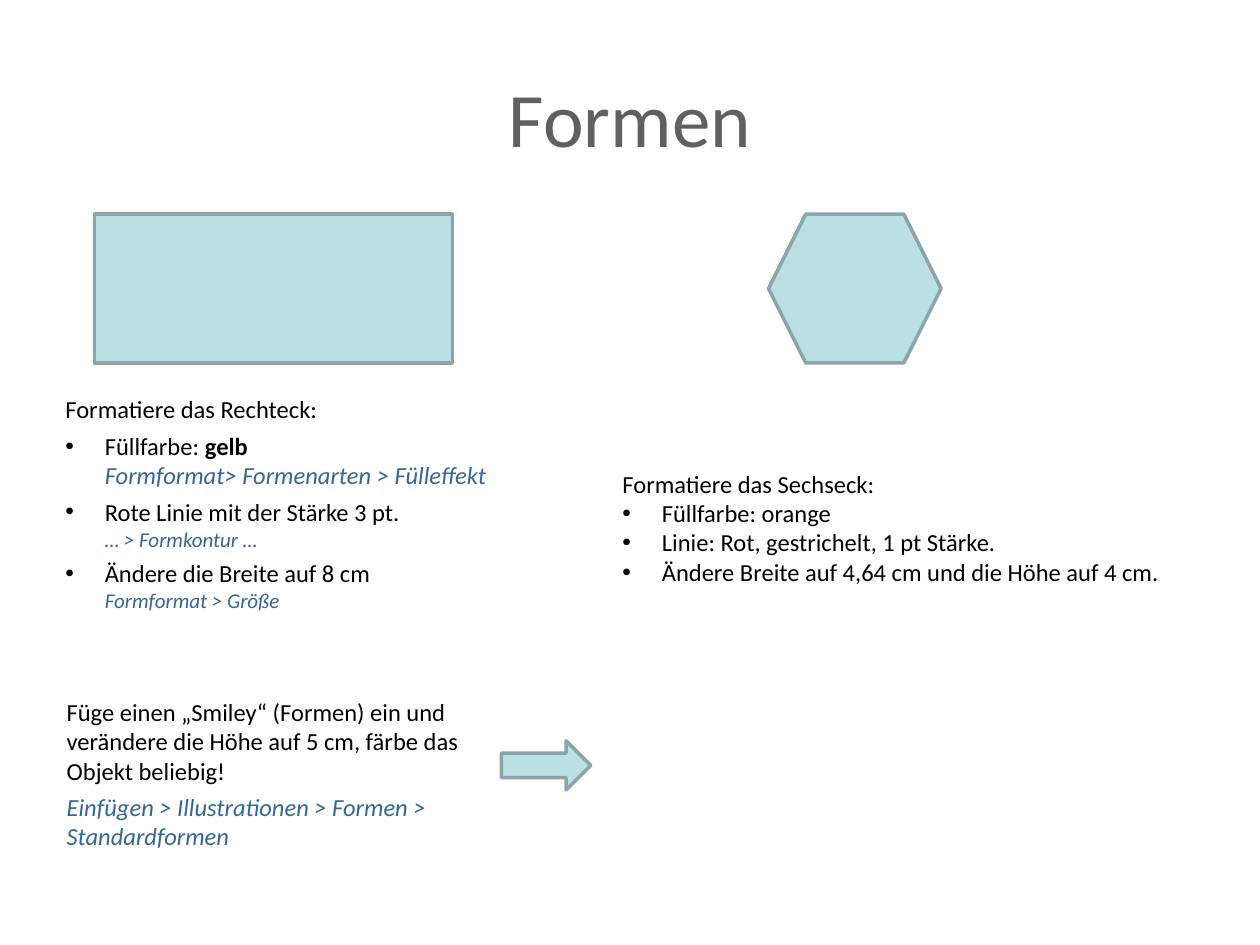
import pptx
import pptx.dml.color
import pptx.enum.shapes
import pptx.enum.text
import pptx.util
from lxml import etree
from pptx.util import Pt

BLACK = pptx.dml.color.RGBColor(0x00, 0x00, 0x00)
GREY = pptx.dml.color.RGBColor(0x60, 0x60, 0x60)
BLUE = pptx.dml.color.RGBColor(0x33, 0x66, 0x99)
FILL = pptx.dml.color.RGBColor(0xBB, 0xE0, 0xE3)
OUTLINE = pptx.dml.color.RGBColor(0x8A, 0xA6, 0xA8)
FONT = "Calibri"
INDENT = Pt(22.5)


def add_run(paragraph, text, size=14, color=BLACK, bold=False, italic=False):
    run = paragraph.add_run()
    run.text = text
    run.font.name = FONT
    run.font.size = Pt(size)
    run.font.color.rgb = color
    run.font.bold = bold
    run.font.italic = italic


def add_paragraph(text_frame, space_before, bullet=False):
    paragraph = text_frame.paragraphs[0]
    if paragraph.runs:
        paragraph = text_frame.add_paragraph()
    paragraph.space_before = Pt(space_before)
    properties = paragraph._p.get_or_add_pPr()
    properties.set("marL", str(INDENT if bullet else 0))
    properties.set("indent", str(-INDENT if bullet else 0))
    tag = pptx.oxml.ns.qn("a:buChar" if bullet else "a:buNone")
    mark = etree.SubElement(properties, tag)
    if bullet:
        mark.set("char", "•")
    return paragraph


presentation = pptx.Presentation()
presentation.slide_width = Pt(720)
presentation.slide_height = Pt(540)
slide = presentation.slides.add_slide(presentation.slide_layouts.get_by_name("Two Content"))
title, rectangle_task, hexagon_task = list(slide.placeholders)[:3]
for placeholder in list(slide.placeholders)[3:]:
    placeholder._element.getparent().remove(placeholder._element)

# Title
title.left, title.top, title.width, title.height = Pt(36), Pt(21.6), Pt(648), Pt(90)
title_paragraph = title.text_frame.paragraphs[0]
title_paragraph.alignment = pptx.enum.text.PP_ALIGN.CENTER
add_run(title_paragraph, "Formen", 44, GREY)

# Shapes to be formatted, and the arrow
shape_types = pptx.enum.shapes.MSO_SHAPE
for shape_type, left, top, width, height in [
    (shape_types.RECTANGLE, 54, 122.4, 204.5, 85),
    (shape_types.HEXAGON, 439.2, 122.4, 98.6, 85),
    (shape_types.RIGHT_ARROW, 286.5, 423.3, 51.1, 28.1),
]:
    shape = slide.shapes.add_shape(shape_type, Pt(left), Pt(top), Pt(width), Pt(height))
    shape.shadow.inherit = False
    shape.fill.solid()
    shape.fill.fore_color.rgb = FILL
    shape.line.color.rgb = OUTLINE
    shape.line.width = Pt(2)

# Text areas
smiley_task = slide.shapes.add_textbox(0, 0, 0, 0)
for area, left, top, width, height in [
    (rectangle_task, 30.2, 221.8, 290.2, 136.1),
    (hexagon_task, 348.5, 264.2, 335.5, 74.9),
    (smiley_task, 31, 394.6, 254.9, 97.2),
]:
    area.left, area.top, area.width, area.height = Pt(left), Pt(top), Pt(width), Pt(height)
    area.text_frame.word_wrap = True
    area.text_frame.auto_size = pptx.enum.text.MSO_AUTO_SIZE.SHAPE_TO_FIT_TEXT

# Rectangle task: each step with its menu path below
frame = rectangle_task.text_frame
add_run(add_paragraph(frame, 4), "Formatiere das Rechteck:")
for step, bold_word, menu, menu_size in [
    ("Füllfarbe: ", "gelb", "Formformat> Formenarten > Fülleffekt", 14),
    ("Rote Linie mit der Stärke 3 pt. ", "", "… > Formkontur …", 12),
    ("Ändere die Breite auf 8 cm", "", "Formformat > Größe", 12),
]:
    paragraph = add_paragraph(frame, 4, bullet=True)
    add_run(paragraph, step)
    if bold_word:
        add_run(paragraph, bold_word, bold=True)
    paragraph.add_line_break()
    add_run(paragraph, menu, menu_size, BLUE, italic=True)

# Hexagon task
frame = hexagon_task.text_frame
add_run(add_paragraph(frame, 0), "Formatiere das Sechseck:")
for step in [
    "Füllfarbe: orange",
    "Linie: Rot, gestrichelt, 1 pt Stärke.",
    "Ändere Breite auf 4,64 cm und die Höhe auf 4 cm.",
]:
    add_run(add_paragraph(frame, 0, bullet=True), step)

# Smiley task
frame = smiley_task.text_frame
add_run(
    add_paragraph(frame, 4),
    "Füge einen „Smiley“ (Formen) ein und verändere die Höhe auf 5 cm, färbe das Objekt beliebig!",
)
add_run(
    add_paragraph(frame, 4),
    "Einfügen > Illustrationen > Formen > Standardformen",
    color=BLUE,
    italic=True,
)

presentation.save("out.pptx")
